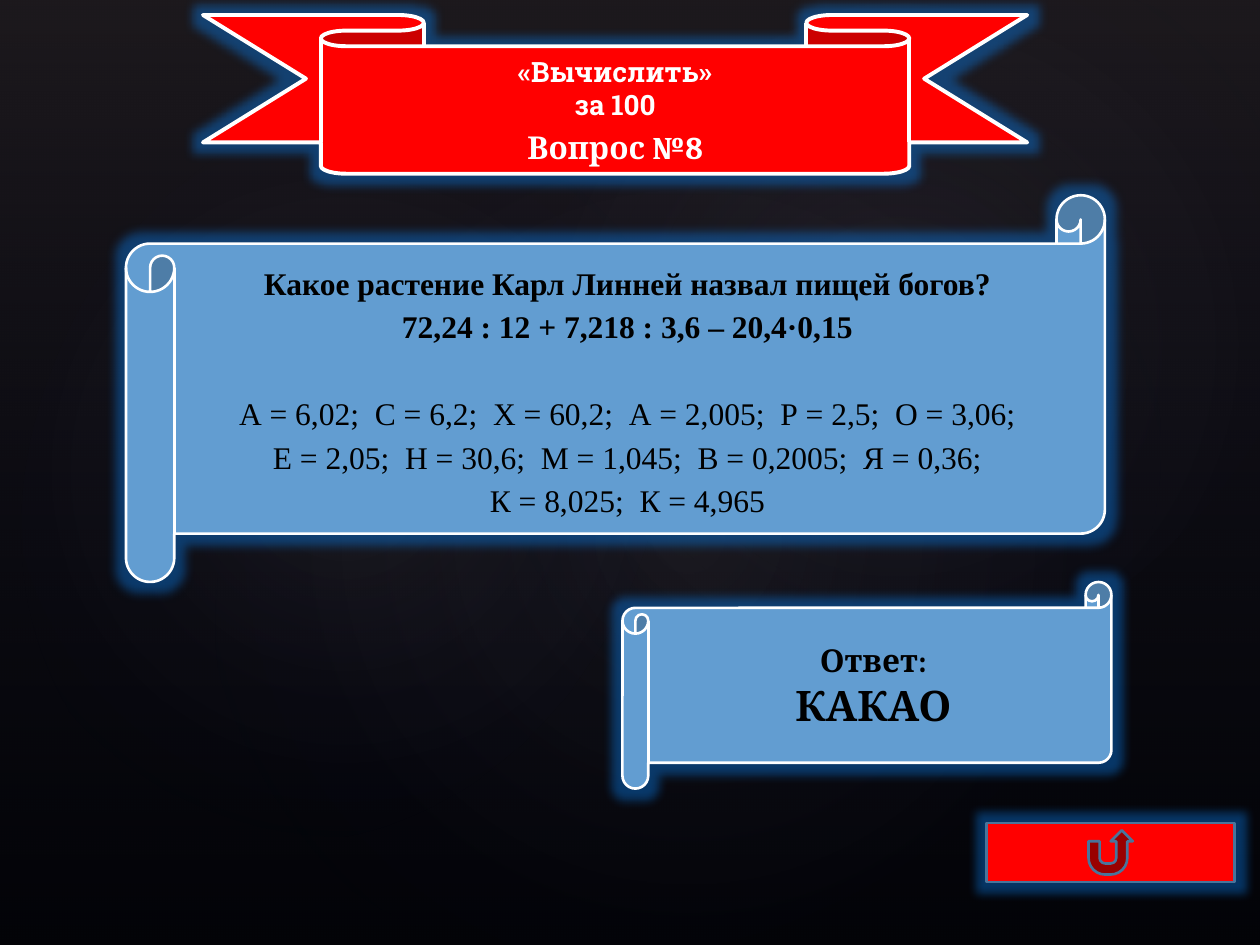
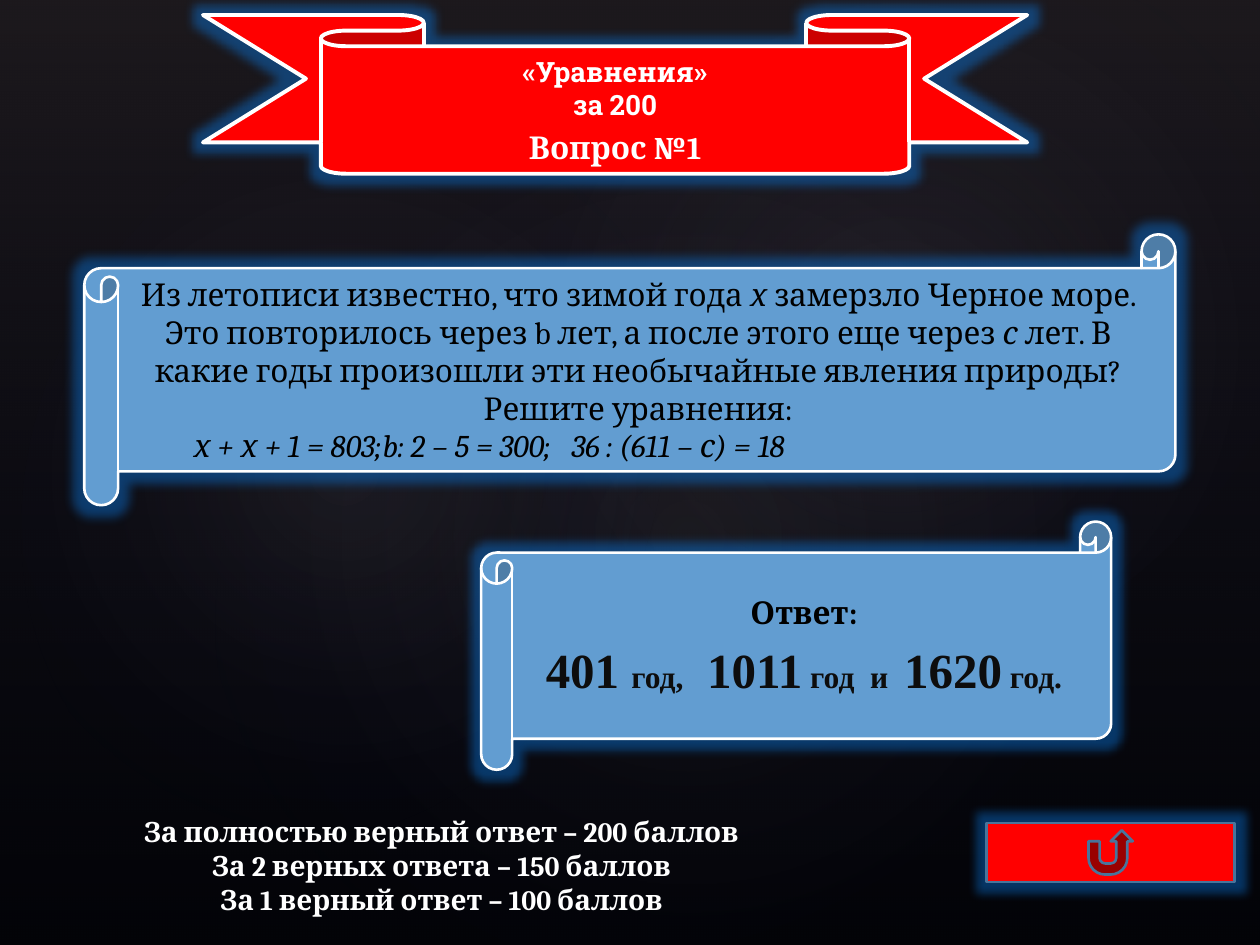
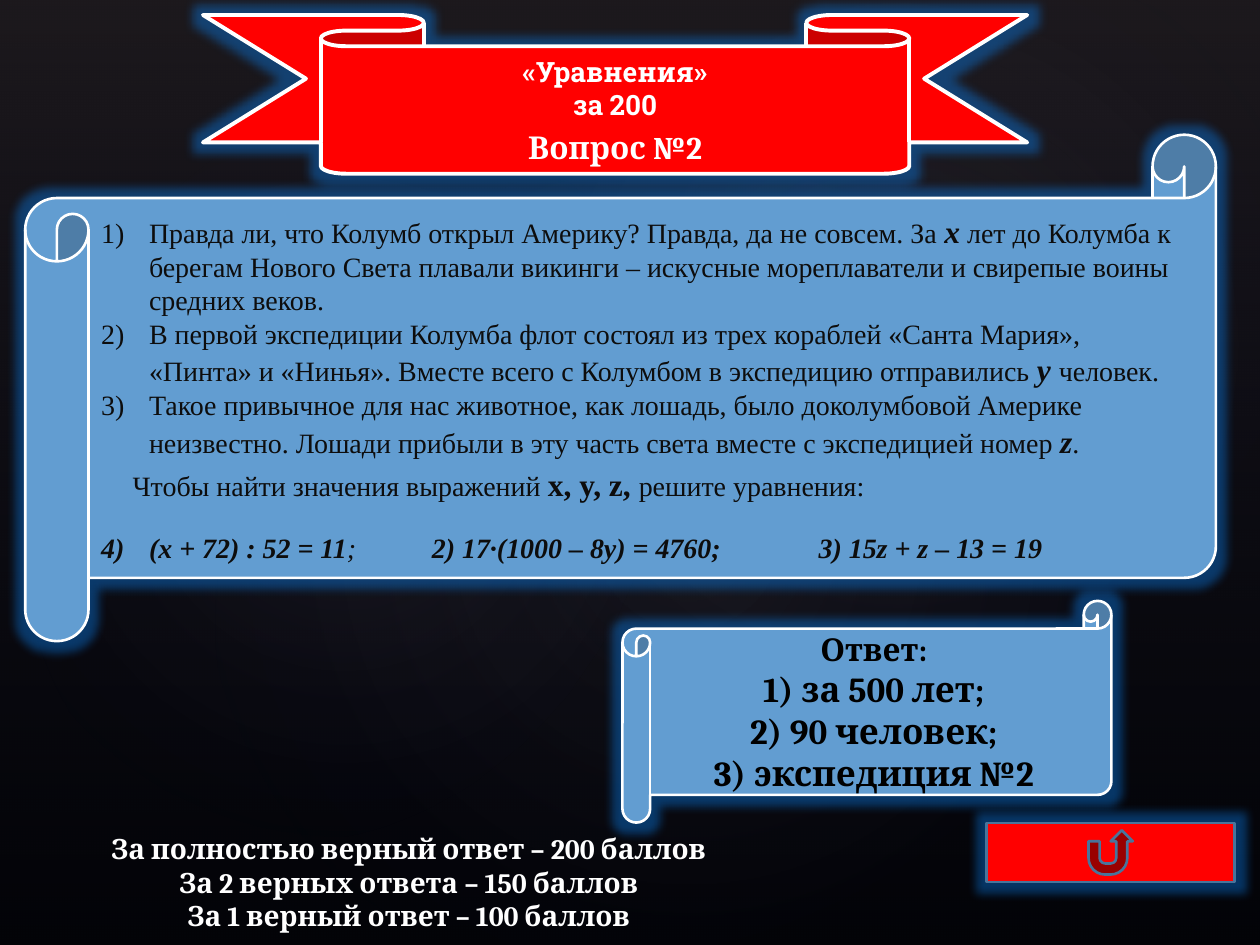
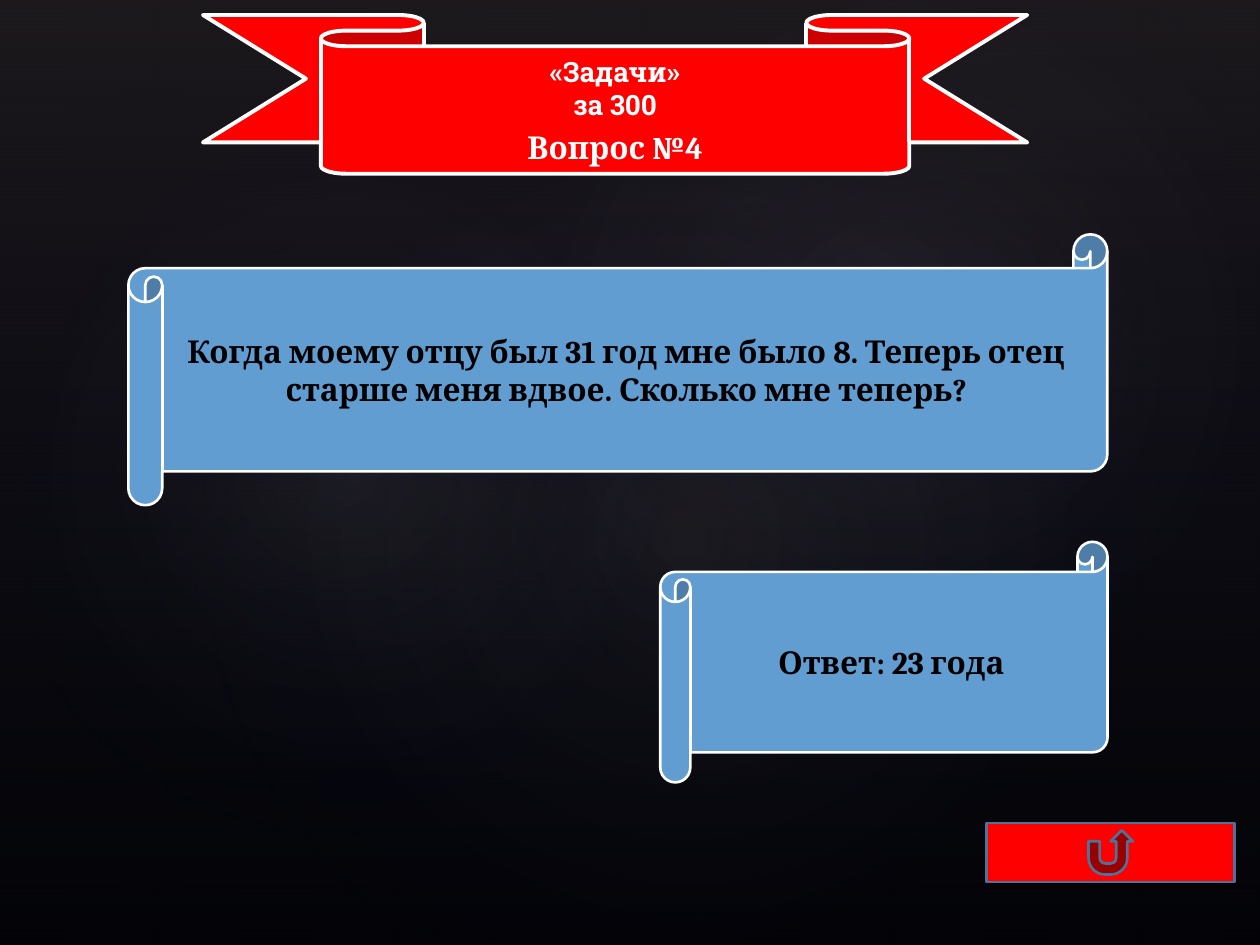
from dataclasses import dataclass, replace

import pptx
import pptx.dml.color
import pptx.enum.shapes
import pptx.enum.text
import pptx.oxml
import pptx.oxml.ns
import pptx.util

Pt = pptx.util.Pt
SHAPE = pptx.enum.shapes.MSO_SHAPE
ALIGN = pptx.enum.text.PP_ALIGN
ANCHOR = pptx.enum.text.MSO_ANCHOR

TITLE_AND_BODY, TITLE_ONLY = 1, 5
SCROLL_CURL = 0.125
RIBBON_FOLD, RIBBON_MIDDLE = 0.197, 0.714
WIDE_GAP = "  "  # an en space and a space


@dataclass(frozen=True)
class Theme:
    background: str = "000000"
    haze_top: str = "504652"
    haze: str = "242852"
    spotlight: str = "C4BCC6"
    ribbon: str = "FF0000"
    scroll: str = "629DD1"
    outline: str = "FFFFFF"
    button_line: str = "49749B"
    glow: str = "0A80F0"
    light: str = "FFFFFF"
    dark: str = "000000"
    soft_dark: str = "0D0D0D"
    serif: str = "Cambria"
    slab: str = "Roboto Slab"
    roman: str = "Times New Roman"
    small: int = 16
    normal: int = 18
    large: int = 20
    answer: int = 24
    huge: int = 28


THEME = Theme()


@dataclass(frozen=True)
class Style:
    font: str
    size: int
    color: str
    bold: bool = False
    italic: bool = False


@dataclass(frozen=True)
class Paragraph:
    """Pieces are (text, style) pairs; number, if set, starts a list item."""
    pieces: tuple
    align: int = ALIGN.CENTER
    line_spacing: float = 1.0
    before: float = 0
    indent: float = 0
    number: int = 0
    tabs: tuple = ()


TOPIC = Style(THEME.slab, THEME.small, THEME.light, bold=True)
NUMBER = Style(THEME.serif, THEME.normal, THEME.light, bold=True)
SCORE = Style(THEME.serif, THEME.small, THEME.light, bold=True)
SERIF = Style(THEME.serif, THEME.normal, THEME.dark)
SERIF_ITALIC = replace(SERIF, italic=True)
SERIF_BOLD = replace(SERIF, bold=True)
ROMAN = Style(THEME.roman, THEME.normal, THEME.dark)
ROMAN_BOLD = replace(ROMAN, bold=True)
FACT = Style(THEME.roman, THEME.small, THEME.soft_dark)
FACT_BOLD = replace(FACT, size=THEME.normal, bold=True)
UNKNOWN = replace(FACT_BOLD, italic=True)
EQUATION = replace(FACT, bold=True, italic=True)
YEAR = replace(FACT_BOLD, size=THEME.huge)


def line(text, style, **options):
    return Paragraph(((text, style),), **options)


def rgb(color):
    return pptx.dml.color.RGBColor.from_string(color)


def drawing_xml(markup):
    """Parse one DrawingML element whose start tag has no attributes yet."""
    name = markup[1:].split(">")[0].split(" ")[0]
    declaration = pptx.oxml.ns.nsdecls("a")
    return pptx.oxml.parse_xml(markup.replace(name, f"{name} {declaration}", 1))


def add_preset(slide, kind, frame, fill=None, outline=None, width=0):
    shape = slide.shapes.add_shape(kind, *map(Pt, frame))
    shape.shadow.inherit = False
    if fill:
        shape.fill.solid()
        shape.fill.fore_color.rgb = rgb(fill)
    else:
        shape.fill.background()
    if outline:
        shape.line.color.rgb = rgb(outline)
        shape.line.width = Pt(width)
    else:
        shape.line.fill.background()
    return shape


def add_glow(shape):
    effects = shape.element.spPr.find(pptx.oxml.ns.qn("a:effectLst"))
    effects.append(drawing_xml(
        f'<a:glow rad="{Pt(11)}"><a:srgbClr val="{THEME.glow}">'
        '<a:alpha val="40000"/></a:srgbClr></a:glow>'))


def set_gradient(shape, stops, direction):
    """Stops are (position, colour, opacity), the numbers in percent."""
    stop_markup = "".join(
        f'<a:gs pos="{position * 1000}"><a:srgbClr val="{color}">'
        f'<a:alpha val="{opacity * 1000}"/></a:srgbClr></a:gs>'
        for position, color, opacity in stops)
    properties = shape.element.spPr
    empty_fill = properties.find(pptx.oxml.ns.qn("a:noFill"))
    properties.replace(empty_fill, drawing_xml(
        f"<a:gradFill><a:gsLst>{stop_markup}</a:gsLst>{direction}</a:gradFill>"))


def format_paragraph(para, content):
    para.alignment = content.align
    para.line_spacing = content.line_spacing
    para.space_before = Pt(content.before)
    para.space_after = Pt(0)
    for text, style in content.pieces:
        span = para.add_run()
        span.text = text
        span.font.name = style.font
        span.font.size = Pt(style.size)
        span.font.bold = style.bold
        span.font.italic = style.italic
        span.font.color.rgb = rgb(style.color)
    properties = para._p.get_or_add_pPr()
    properties.set("marL", str(Pt(content.indent)))
    properties.set("indent", str(-Pt(content.indent) if content.number else 0))
    if content.number:
        bullet = f'<a:buAutoNum type="arabicParenR" startAt="{content.number}"/>'
        if content.number < 4:
            bullet = '<a:buAutoNum type="arabicParenR"/>'
        properties.append(drawing_xml(bullet))
    else:
        properties.append(drawing_xml("<a:buNone />"))
    if content.tabs:
        stops = "".join(f'<a:tab pos="{Pt(stop)}" algn="l"/>' for stop in content.tabs)
        properties.append(drawing_xml(f"<a:tabLst>{stops}</a:tabLst>"))


def write_text(shape, paragraphs, anchor=ANCHOR.MIDDLE):
    text_frame = shape.text_frame
    text_frame.word_wrap = True
    text_frame.auto_size = pptx.enum.text.MSO_AUTO_SIZE.NONE
    text_frame.vertical_anchor = anchor
    for index, content in enumerate(paragraphs):
        para = text_frame.add_paragraph() if index else text_frame.paragraphs[0]
        format_paragraph(para, content)


def place_on_top(slide, placeholder, frame):
    placeholder.left, placeholder.top, placeholder.width, placeholder.height = map(Pt, frame)
    slide.shapes.element.append(placeholder.element)


def add_title_ribbon(slide, topic, points, question_number, glow):
    left, top, width, height = frame = (116, 8.6, 471, 90.7)
    ribbon = add_preset(slide, SHAPE.DOWN_RIBBON, frame,
                        THEME.ribbon, THEME.outline, 2.25)
    ribbon.adjustments[0] = RIBBON_FOLD
    ribbon.adjustments[1] = RIBBON_MIDDLE
    if glow:
        add_glow(ribbon)
    title = slide.shapes.title
    place_on_top(slide, title, (
        left + width * (1 - RIBBON_MIDDLE) / 2, top + height * RIBBON_FOLD,
        width * RIBBON_MIDDLE, height * (1 - RIBBON_FOLD)))
    write_text(title, [
        line(f"«{topic}»", TOPIC),
        line(f"за {points}", TOPIC),
        line(f"Вопрос №{question_number}", NUMBER, before=3.6)])


def add_return_button(slide, glow):
    button = add_preset(slide, SHAPE.ACTION_BUTTON_RETURN, (563.8, 470.2, 141.8, 33.8),
                        THEME.ribbon, THEME.button_line, 1.5)
    if glow:
        add_glow(button)


def add_scroll(slide, frame, paragraphs, glow):
    """Draw a scroll; a numbered list goes into the body placeholder over it."""
    scroll = add_preset(slide, SHAPE.HORIZONTAL_SCROLL, frame,
                        THEME.scroll, THEME.outline, 1.5)
    if glow:
        add_glow(scroll)
    if not any(content.number for content in paragraphs):
        write_text(scroll, paragraphs)
        return
    left, top, width, height = frame
    curl = SCROLL_CURL * min(width, height)
    body = slide.placeholders[1]
    place_on_top(slide, body, (left + curl, top + curl,
                               width - 1.5 * curl, height - 2 * curl))
    write_text(body, paragraphs)


def add_scores(slide, left, top):
    box = slide.shapes.add_textbox(*map(Pt, (left, top, 405.4, 67.7)))
    write_text(box, [
        line("За полностью верный ответ – 200 баллов", SCORE),
        line("За 2 верных ответа – 150 баллов", SCORE),
        line("За 1 верный ответ – 100 баллов", SCORE)], ANCHOR.TOP)


def add_question_slide(deck, topic, points, question_number, question, answer,
                       scores_at=None, glow=True):
    """Question and answer are (frame, paragraphs) pairs."""
    has_list = any(content.number for content in question[1])
    layout = deck.slide_layouts[TITLE_AND_BODY if has_list else TITLE_ONLY]
    slide = deck.slides.add_slide(layout)
    add_title_ribbon(slide, topic, points, question_number, glow)
    add_return_button(slide, glow)
    add_scroll(slide, *question, glow)
    add_scroll(slide, *answer, glow)
    if scores_at:
        add_scores(slide, *scores_at)
    return slide


def move_to_master(master, shapes):
    """Put the shapes, back to front, behind everything on the master."""
    for position, shape in enumerate(shapes, start=2):
        master.shapes.element.insert(position, shape.element)


def build_backdrop(deck, slide):
    """Draw the shared backdrop by way of the given slide."""
    deck.slide_master.background.fill.solid()
    deck.slide_master.background.fill.fore_color.rgb = rgb(THEME.background)
    haze = add_preset(slide, SHAPE.RECTANGLE, (0, 0, 720, 540))
    set_gradient(haze, [(0, THEME.haze_top, 36), (100, THEME.haze, 10)],
                 '<a:lin ang="5400000" scaled="0"/>')
    layers = [haze]
    for frame, rotation, opacity in (
            ((108, 82, 570.2, 449.3), 328.7, 7),
            ((-21.6, 92.2, 436.3, 352.8), 294.3, 8),
            ((257.8, 9.4, 510.5, 374.4), 328.7, 8)):
        spotlight = add_preset(slide, SHAPE.OVAL, frame)
        spotlight.rotation = rotation
        set_gradient(spotlight, [(0, THEME.spotlight, opacity), (58, THEME.haze, 0)],
                     '<a:path path="circle"><a:fillToRect l="50000" t="50000" '
                     'r="50000" b="50000"/></a:path>')
        layers.append(spotlight)
    move_to_master(deck.slide_master, layers)


def letter_row(*codes, ending="", **options):
    return line(f";{WIDE_GAP}".join(codes) + ending, ROMAN, line_spacing=1.15, **options)


def fact(*pieces, number):
    return Paragraph(pieces, align=ALIGN.LEFT, indent=27.4, number=number)


def add_calculation(deck):
    question = [
        line("Какое растение Карл Линней назвал пищей богов?", ROMAN_BOLD, line_spacing=1.15),
        line("72,24 : 12 + 7,218 : 3,6 – 20,4·0,15", ROMAN_BOLD, line_spacing=1.15),
        letter_row("А = 6,02", "С = 6,2", "Х = 60,2", "А = 2,005", "Р = 2,5", "О = 3,06",
                   ending=";", before=24.9),
        letter_row("Е = 2,05", "Н = 30,6", "М = 1,045", "В = 0,2005", "Я = 0,36", ending=";"),
        letter_row("К = 8,025", "К = 4,965")]
    answer = [line("Ответ:", SERIF_BOLD),
              line("КАКАО", replace(SERIF_BOLD, size=THEME.answer))]
    return add_question_slide(deck, "Вычислить", 100, 8,
                              ((72, 111.6, 559.4, 221), question),
                              ((355.7, 332.6, 279.4, 118.1), answer))


def add_chronicle(deck):
    question = [
        Paragraph((
            ("Из летописи известно, что зимой года ", SERIF), ("х", SERIF_ITALIC),
            (" замерзло Черное море. Это повторилось через b лет, "
             "а после этого еще через ", SERIF), ("с", SERIF_ITALIC),
            (" лет. В какие годы произошли эти необычайные явления природы?", SERIF))),
        line("Решите уравнения:", SERIF),
        line("\tх + х + 1 = 803;\tb: 2 – 5 = 300;\t36 : (611 – с) = 18", SERIF_ITALIC,
             align=ALIGN.LEFT, tabs=(13, 229, 444.5))]
    answer = [
        line("Ответ:", SERIF_BOLD),
        Paragraph((("401 ", YEAR), (f"год, {WIDE_GAP}", FACT_BOLD),
                   ("1011", YEAR), (f" год{WIDE_GAP}и{WIDE_GAP}", FACT_BOLD),
                   ("1620", YEAR), (" год.", FACT_BOLD)), line_spacing=1.15)]
    add_question_slide(deck, "Уравнения", 200, 1,
                       ((48.2, 133.9, 623.5, 154.8), question),
                       ((275, 298.1, 360, 141.8), answer), scores_at=(49.7, 462.2))


def add_columbus(deck):
    question = [
        fact(("Правда ли, что Колумб открыл Америку? Правда, да не совсем. За ", FACT),
             ("х", UNKNOWN),
             (" лет до Колумба к берегам Нового Света плавали викинги – искусные "
              "мореплаватели и свирепые воины средних веков.", FACT), number=1),
        fact(("В первой экспедиции Колумба флот состоял из трех кораблей «Санта Мария», "
              "«Пинта» и «Нинья». Вместе всего с Колумбом в экспедицию отправились ", FACT),
             ("у ", UNKNOWN), ("человек.", FACT), number=2),
        fact(("Такое привычное для нас животное, как лошадь, было доколумбовой Америке "
              "неизвестно. Лошади прибыли в эту часть света вместе с экспедицией номер ", FACT),
             ("z", UNKNOWN), (".", FACT), number=3),
        Paragraph((("Чтобы найти значения выражений ", FACT), ("x, y, z, ", FACT_BOLD),
                   ("решите уравнения:", FACT)),
                  align=ALIGN.LEFT, line_spacing=1.15, indent=18),
        replace(fact(("(х + 72) : 52 = 11", EQUATION),
                     (";\t", replace(EQUATION, bold=False)),
                     ("2) 17·(1000 – 8у) = 4760;\t3) 15z + z – 13 = 19", EQUATION), number=4),
                before=16, tabs=(189, 410))]
    result = replace(SERIF_BOLD, size=THEME.large)
    answer = [line("Ответ:", SERIF_BOLD), line("1) за 500 лет;", result),
              line("2) 90 человек;", result), line("3) экспедиция №2", result)]
    add_question_slide(deck, "Уравнения", 200, 2,
                       ((14.4, 77, 680.4, 289.4), question),
                       ((355.7, 343.4, 279.4, 126.7), answer), scores_at=(31, 471.6))


def add_ages(deck):
    question = [line("Когда моему отцу был 31 год мне было 8. Теперь отец старше меня вдвое. "
                     "Сколько мне теперь?", SERIF_BOLD)]
    answer = [line("Ответ: 23 года", SERIF_BOLD)]
    add_question_slide(deck, "Задачи", 300, 4,
                       ((73.4, 133.9, 559.4, 154.8), question),
                       ((377.3, 309.6, 255.6, 137.5), answer), glow=False)


def main():
    deck = pptx.Presentation()
    deck.slide_width, deck.slide_height = Pt(720), Pt(540)
    first_slide = add_calculation(deck)
    build_backdrop(deck, first_slide)
    add_chronicle(deck)
    add_columbus(deck)
    add_ages(deck)
    deck.save("out.pptx")


if __name__ == "__main__":
    main()
